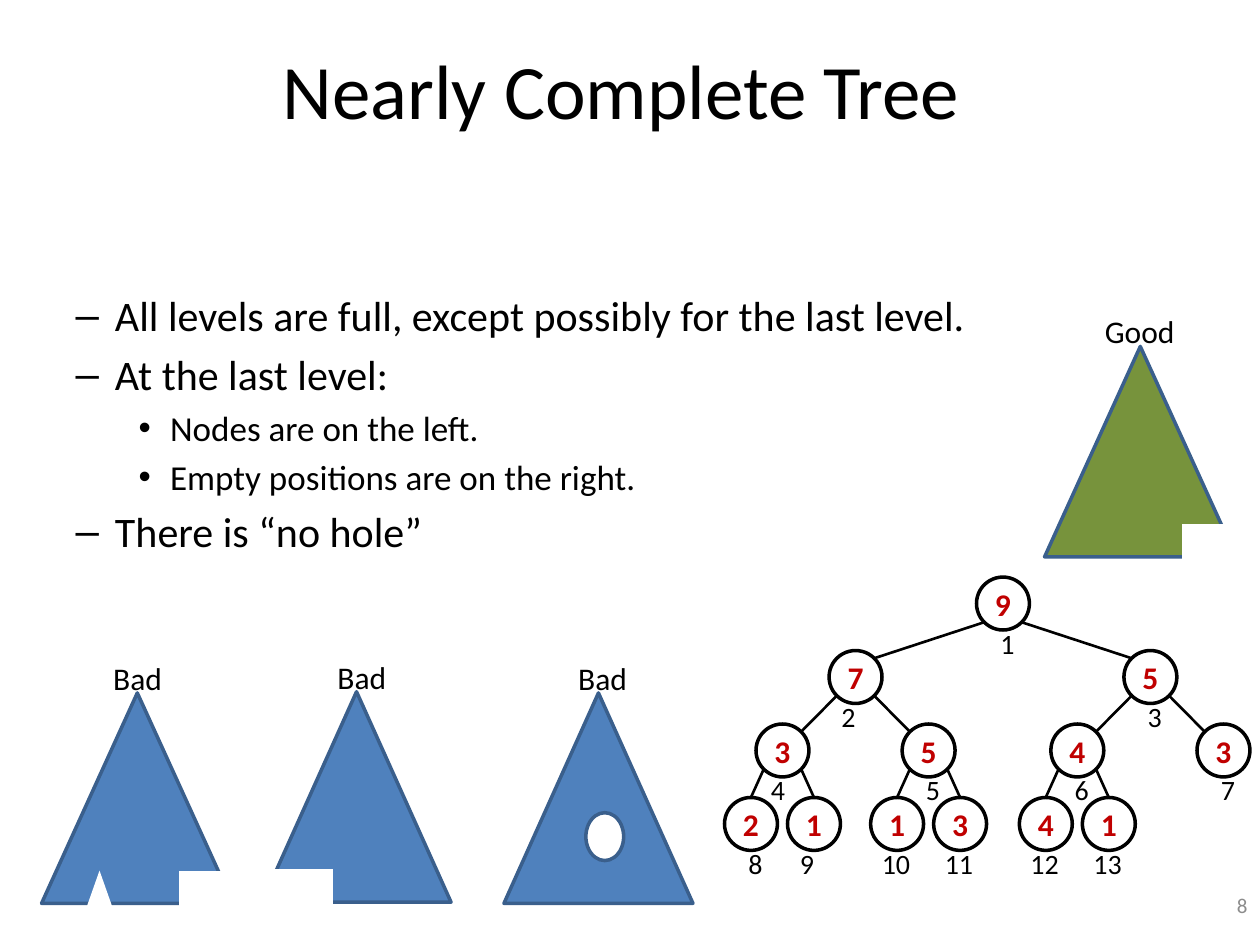
from math import sqrt

from pptx import Presentation
from pptx.dml.color import RGBColor
from pptx.enum.shapes import MSO_CONNECTOR, MSO_SHAPE as SHAPE
from pptx.enum.text import MSO_ANCHOR as ANCHOR, MSO_AUTO_SIZE as AUTO, PP_ALIGN as ALIGN
from pptx.oxml.ns import qn
from pptx.util import Inches, Pt

COLORS = {
    "black": "000000",
    "white": "FFFFFF",
    "bad": "4F81BD",
    "good": "77933C",
    "outline": "3A5F8C",
    "key": "C00000",
    "number": "8C8C8C",
}
FONT = "Calibri"
NODE = 0.42


def rgb(name):
    return RGBColor.from_string(COLORS[name])


def inches(box):
    return [Inches(v) for v in box]


def place(sp, box):
    sp.left, sp.top, sp.width, sp.height = inches(box)


def write(p, text, size=18, color="black", bold=False, align=None):
    r = p.add_run()
    r.text = text
    r.font.name, r.font.size, r.font.bold = FONT, Pt(size), bold
    r.font.color.rgb = rgb(color)
    if align is not None:
        p.alignment = align


def add_text(slide, text, box, wrap=False, anchor=ANCHOR.TOP, **fmt):
    tf = slide.shapes.add_textbox(*inches(box)).text_frame
    tf.word_wrap = wrap
    tf.auto_size = AUTO.NONE if wrap else AUTO.SHAPE_TO_FIT_TEXT
    tf.vertical_anchor = anchor
    write(tf.paragraphs[0], text, **fmt)


def add_shape(slide, kind, box, fill=None, line=None):
    sp = slide.shapes.add_shape(kind, *inches(box))
    sp.shadow.inherit = False
    if fill:
        sp.fill.solid()
        sp.fill.fore_color.rgb = rgb(fill)
    else:
        sp.fill.background()
    if line:
        sp.line.color.rgb = rgb(line)
        sp.line.width = Pt(2)
    else:
        sp.line.fill.background()
    return sp


def add_edge(slide, x1, y1, x2, y2):
    c = slide.shapes.add_connector(MSO_CONNECTOR.STRAIGHT, *inches((x1, y1, x2, y2)))
    c.line.color.rgb = rgb("black")
    c.line.width = Pt(1.5)
    spPr = c._element.spPr
    spPr.append(spPr.makeelement(qn("a:effectLst"), {}))


def fill_title(slide, box):
    title = slide.shapes.title
    place(title, box)
    title.text_frame.vertical_anchor = ANCHOR.MIDDLE
    write(title.text_frame.paragraphs[0], "Nearly Complete Tree ", size=44, align=ALIGN.CENTER)


def fill_body(slide, box):
    items = [
        (1, "All levels are full, except possibly for the last level."),
        (1, "At the last level:"),
        (2, "Nodes are on the left."),
        (2, "Empty positions are on the right."),
        (1, "There is “no hole”"),
    ]
    body = slide.placeholders[1]
    place(body, box)
    tf = body.text_frame
    tf.auto_size = AUTO.NONE
    for i, (level, text) in enumerate(items):
        p = tf.add_paragraph() if i else tf.paragraphs[0]
        p.level = level
        write(p, text, size=24 if level == 1 else 20)


def draw_triangle(slide, box, label, label_at, fill="bad", corner=None, gap=None, hole=None):
    left, top = box[:2]
    add_shape(slide, SHAPE.ISOSCELES_TRIANGLE, box, fill, "outline")
    if corner:
        dx, width = corner
        cut = add_shape(slide, SHAPE.PARALLELOGRAM, (left + dx, top + 1.41, width, 0.42), "white")
        cut.adjustments[0] = 0
    if gap:
        dx, dy, w, h = gap
        add_shape(slide, SHAPE.ISOSCELES_TRIANGLE, (left + dx, top + dy, w, h), "white")
    if hole:
        dx, dy, w, h = hole
        add_shape(slide, SHAPE.OVAL, (left + dx, top + dy, w, h), "white", "outline")
    dx, width = label_at
    add_text(slide, label, (left + dx, top - 0.32, width, 0.4))


def draw_heap(slide, root_x, root_y):
    keys = [9, 7, 5, 3, 5, 4, 3, 2, 1, 1, 3, 4, 1]
    spread = [0, 1.17, 0.58, 0.25]
    label_shift = {2: -0.21, 4: -0.19, 9: -0.21}
    corner = NODE / 2 / sqrt(2)
    centers = {}
    for i, key in enumerate(keys, start=1):
        depth = i.bit_length() - 1
        x, y = root_x, root_y + 0.583 * depth
        if depth:
            px, py = centers[i // 2]
            side = 1 if i % 2 else -1
            x = px + side * spread[depth]
            end = (x, y - NODE / 2) if depth == 3 else (x - side * corner, y - corner)
            add_edge(slide, px + side * corner, py + corner, *end)
        centers[i] = x, y

        circle = (x - NODE / 2, y - NODE / 2, NODE, NODE)
        tf = add_shape(slide, SHAPE.OVAL, circle, line="black").text_frame
        tf.word_wrap = False
        tf.vertical_anchor = ANCHOR.MIDDLE
        write(tf.paragraphs[0], str(key), color="key", bold=True, align=ALIGN.CENTER)

        dx = label_shift.get(i, -0.12 if i < 10 else -0.22)
        add_text(slide, str(i), (x + dx, y + 0.13, 0.32 if i < 10 else 0.43, 0.37), size=16)


def main():
    prs = Presentation()
    prs.slide_width, prs.slide_height = Inches(10), Inches(7.5)
    slide = prs.slides.add_slide(prs.slide_layouts[1])

    fill_title(slide, (0.5, 0.08, 9, 1.25))
    fill_body(slide, (0, 2.25, 7.84, 2.4))
    draw_triangle(slide, (8.29, 2.75, 1.52, 1.67), "Good", (0.38, 0.82),
                  fill="good", corner=(1.09, 0.54))
    draw_triangle(slide, (2.08, 5.49, 1.5, 1.67), "Bad", (0.5, 0.59), corner=(-0.09, 0.65))
    draw_triangle(slide, (0.33, 5.5, 1.52, 1.67), "Bad", (0.47, 0.59),
                  corner=(1.09, 0.54), gap=(0.34, 1.41, 0.24, 0.34))
    draw_triangle(slide, (4, 5.5, 1.5, 1.67), "Bad", (0.49, 0.59), hole=(0.65, 0.95, 0.3, 0.38))
    draw_heap(slide, 7.96, 4.79)
    add_text(slide, "8", (7.67, 6.98, 2.33, 0.4), wrap=True, anchor=ANCHOR.MIDDLE,
             size=12, color="number", align=ALIGN.RIGHT)
    prs.save("out.pptx")


if __name__ == "__main__":
    main()
